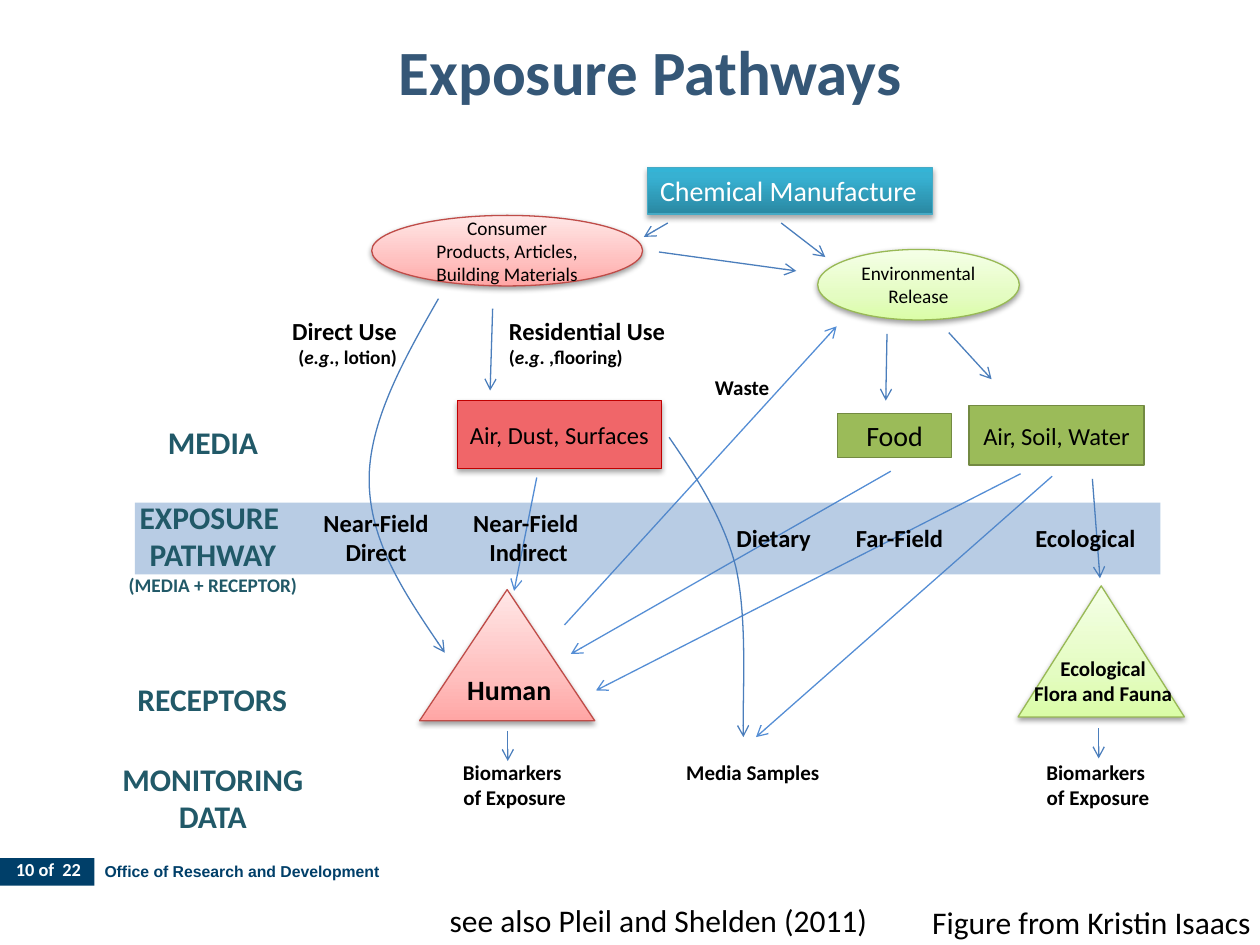
import pptx
import pptx.util
import pptx.dml.color
import pptx.enum.shapes
import pptx.enum.text
import pptx.oxml
import pptx.oxml.ns
from lxml import etree

PX = 9144  # EMU in one px, 100 px to the inch
SHAPE = pptx.enum.shapes.MSO_SHAPE
ALIGN = {"l": pptx.enum.text.PP_ALIGN.LEFT, "c": pptx.enum.text.PP_ALIGN.CENTER,
         "r": pptx.enum.text.PP_ALIGN.RIGHT, "j": pptx.enum.text.PP_ALIGN.JUSTIFY}
ANCHOR = {"t": pptx.enum.text.MSO_ANCHOR.TOP, "m": pptx.enum.text.MSO_ANCHOR.MIDDLE,
          "b": pptx.enum.text.MSO_ANCHOR.BOTTOM}
FIT = pptx.enum.text.MSO_AUTO_SIZE

HEX = {
    "black": "000000", "white": "FFFFFF", "navy": "003F69", "title": "355777",
    "teal": "215968", "blue": "4B7EBC", "sky": "558ED5", "band": "4F81BD",
    "aqua": "46AAC5", "rose": "BF4C48", "lime": "98B955", "green": "9BBB59",
    "olive": "738A42", "coral": "F06669", "red": "C00000",
}
# Stops run from the bottom of the shape to its top
BLENDS = {
    "aqua": [(0, "2A88A2"), (80, "37B1D2"), (100, "34B4D6")],
    "rose": [(0, "FFA6A5"), (35, "FFC0BF"), (100, "FFE7E7")],
    "lime": [(0, "DAFDA7"), (35, "E4FCC2"), (100, "F5FFE7")],
}


def color(name):
    return pptx.dml.color.RGBColor.from_string(HEX[name])


def node(parent, tag, **attrs):
    item = etree.SubElement(parent, pptx.oxml.ns.qn(tag))
    for key, value in attrs.items():
        item.set(key, str(value))
    return item


def write(frame, paras, size, hue="black", bold=False, align="c", anchor="t",
          wrap=True, grow=False, face="Calibri", gap=None):
    """Each paragraph is a string, or (size, run, run...) with every second run italic."""
    frame.word_wrap = wrap
    frame.vertical_anchor = ANCHOR[anchor]
    frame.auto_size = FIT.SHAPE_TO_FIT_TEXT if grow else FIT.NONE
    for i, entry in enumerate(paras):
        para = frame.paragraphs[0] if i == 0 else frame.add_paragraph()
        para.alignment = ALIGN[align]
        if gap:
            para.line_spacing = gap
        points, *parts = (size, entry) if isinstance(entry, str) else entry
        for j, part in enumerate(parts):
            run = para.add_run()
            run.text = part
            font = run.font
            font.name, font.size, font.bold = face, pptx.util.Pt(points), bold
            font.italic = j % 2 == 1
            font.color.rgb = color(hue)


def label(slide, at, paras, size, inset=True, **style):
    box = slide.shapes.add_textbox(*(n * PX for n in at))
    frame = box.text_frame
    if not inset:
        frame.margin_left = frame.margin_right = frame.margin_top = frame.margin_bottom = 0
    write(frame, paras, size, **{"wrap": False, "grow": True, **style})


def blend(shape, stops):
    shape.fill.gradient()
    shape.fill.gradient_angle = 90
    group = shape._element.spPr.find(".//" + pptx.oxml.ns.qn("a:gsLst"))
    for old in list(group):
        group.remove(old)
    for place, tone in stops:
        node(node(group, "a:gs", pos=place * 1000), "a:srgbClr", val=tone)


def shade(shape, alpha, drop):
    effects = shape._element.spPr.find(pptx.oxml.ns.qn("a:effectLst"))
    cast = node(effects, "a:outerShdw", blurRad=40000, dist=drop, dir=5400000, rotWithShape=0)
    node(node(cast, "a:srgbClr", val=HEX["black"]), "a:alpha", val=alpha * 1000)


def block(slide, kind, at, fill, line=None, shadow=None):
    shape = slide.shapes.add_shape(kind, *(n * PX for n in at))
    shape.shadow.inherit = False
    if fill in BLENDS:
        blend(shape, BLENDS[fill])
    else:
        shape.fill.solid()
        shape.fill.fore_color.rgb = color(fill)
    if line:
        shape.line.color.rgb = color(line)
        shape.line.width = pptx.util.Pt(0.75)
    else:
        shape.line.fill.background()
    if shadow:
        shade(shape, *shadow)
    return shape


def stroke(line, hue):
    line.color.rgb = color(hue)
    line.width = pptx.util.Pt(0.75)
    node(line._get_or_add_ln(), "a:tailEnd", type="arrow")


def arrow(slide, ends, hue="blue"):
    link = slide.shapes.add_connector(pptx.enum.shapes.MSO_CONNECTOR.STRAIGHT,
                                      *(n * PX for n in ends))
    stroke(link.line, hue)
    node(link._element.spPr, "a:effectLst")


def curve(slide, start, points):
    """Draw cubic curves; points holds three per curve."""
    maker = slide.shapes.build_freeform(*start, scale=PX)
    maker.add_line_segments(points, close=False)
    shape = maker.convert_to_shape()
    shape.shadow.inherit = False
    shape.fill.background()
    stroke(shape.line, "blue")
    track = shape._element.spPr.find(".//" + pptx.oxml.ns.qn("a:path"))
    legs = track.findall(pptx.oxml.ns.qn("a:lnTo"))
    for i in range(0, len(legs), 3):
        bend = node(track, "a:cubicBezTo")
        for leg in legs[i:i + 3]:
            bend.append(leg[0])
            track.remove(leg)


def footer(slide):
    block(slide, SHAPE.RECTANGLE, (0, 681, 75, 22), "navy")
    style = dict(inset=False, bold=True, anchor="b", wrap=True, gap=0.9)
    label(slide, (83, 685, 617, 14), ["Office of Research and Development"], 9,
          hue="navy", face="Arial", align="j", **style)
    label(slide, (0, 683, 77, 16), ["10 of  22"], 10.5, hue="white", **style)


def main():
    deck = pptx.Presentation()
    deck.slide_width, deck.slide_height = 1000 * PX, 750 * PX
    slide = deck.slides.add_slide(deck.slide_layouts[5])
    title = slide.shapes.title
    title.left, title.top, title.width, title.height = (n * PX for n in (263, 21, 506, 125))
    write(title.text_frame, ["Exposure Pathways"], 36, "title", bold=True)
    footer(slide)

    # Arrows behind the pathway band
    arrow(slide, (867, 380, 873, 459))
    for ends in [(835, 378, 600, 585), (707, 374, 453, 519), (426, 379, 408, 469),
                 (810, 376, 473, 548), (448, 496, 664, 259)]:
        arrow(slide, ends, "sky")
    curve(slide, (348, 237), [(320, 286), (292, 336), (293, 383),
                              (294, 430), (323, 474), (353, 518)])

    # Pathway band
    band = block(slide, SHAPE.RECTANGLE, (107, 399, 814, 57), "band")
    tint = band._element.spPr.find(".//" + pptx.oxml.ns.qn("a:srgbClr"))
    node(tint, "a:alpha", val=40000)

    # Sources, media and receptors
    hard, soft = (35, 23000), (38, 20000)
    maker = block(slide, SHAPE.RECTANGLE, (514, 133, 226, 37), "aqua", "aqua", hard)
    write(maker.text_frame, ["Chemical Manufacture"], 16, "white", align="l",
          wrap=False, grow=True)
    for kind, at, fill, line, shadow, paras, size in [
        (SHAPE.OVAL, (295, 171, 215, 56), "rose", "rose", soft,
         ["Consumer", "Products, Articles, Building Materials"], 11),
        (SHAPE.OVAL, (649, 198, 160, 56), "lime", "lime", soft, ["Environmental Release"], 11),
        (SHAPE.RECTANGLE, (665, 328, 90, 35), "green", "olive", None, ["Food"], 16),
        (SHAPE.RECTANGLE, (769, 322, 139, 47), "green", "olive", None, ["Air, Soil, Water"], 14),
        (SHAPE.RECTANGLE, (363, 318, 162, 54), "coral", "red", hard, ["Air, Dust, Surfaces"], 14),
    ]:
        shape = block(slide, kind, at, fill, line, shadow)
        write(shape.text_frame, paras, size, anchor="m")
    block(slide, SHAPE.ISOSCELES_TRIANGLE, (333, 468, 139, 104), "rose", "rose", soft)
    block(slide, SHAPE.ISOSCELES_TRIANGLE, (808, 465, 132, 104), "lime", "lime", soft)

    # Arrows in front
    for ends in [(620, 177, 655, 204), (704, 265, 703, 318), (753, 264, 787, 301),
                 (391, 245, 389, 310), (530, 177, 511, 188), (523, 200, 632, 215),
                 (872, 578, 872, 602), (403, 580, 403, 604)]:
        arrow(slide, ends)
    curve(slide, (531, 347), [(553, 379), (574, 411), (584, 450),
                              (593, 490), (589, 561), (590, 585)])

    # Pathway names on the band
    for at, paras in [((246, 398, 105, 57), ["Near-Field", "Direct"]),
                      ((365, 398, 109, 57), ["Near-Field ", "Indirect"]),
                      ((574, 410, 80, 34), ["Dietary"]), ((669, 410, 90, 34), ["Far-Field"]),
                      ((811, 410, 101, 34), ["Ecological"])]:
        label(slide, at, paras, 14, bold=True, anchor="m")

    # Row names at the left
    for at, paras in [((123, 331, 92, 40), ["MEDIA"]),
                      ((91, 390, 156, 89), ["EXPOSURE ", "PATHWAY", (11, "(MEDIA + RECEPTOR)")]),
                      ((98, 535, 141, 40), ["RECEPTORS"]),
                      ((86, 598, 166, 71), ["MONITORING", "DATA"])]:
        label(slide, at, paras, 18, hue="teal", bold=True)

    # Uses, receptors and samples
    label(slide, (221, 246, 104, 54), ["Direct Use", (11, "(", "e.g", "., lotion)")], 14,
          bold=True, align="r")
    label(slide, (394, 246, 145, 54), ["Residential Use", (11, "(", "e.g", ". ,flooring)")], 14,
          bold=True, align="l")
    label(slide, (361, 529, 88, 37), ["Human"], 16, bold=True, align="l")
    marker = ["Biomarkers ", "of Exposure"]
    for at, paras in [((810, 515, 131, 50), ["Ecological", "Flora and Fauna"]),
                      ((357, 598, 103, 50), marker), ((820, 598, 103, 50), marker),
                      ((534, 598, 127, 30), ["Media Samples"]), ((557, 292, 64, 30), ["Waste"])]:
        label(slide, at, paras, 12, bold=True)

    # Credits
    label(slide, (347, 710, 356, 40), ["see also Pleil and Shelden (2011)"], 18, align="l")
    label(slide, (730, 712, 274, 40), ["Figure from Kristin Isaacs"], 18, align="l", wrap=True)
    deck.save("out.pptx")


if __name__ == "__main__":
    main()
